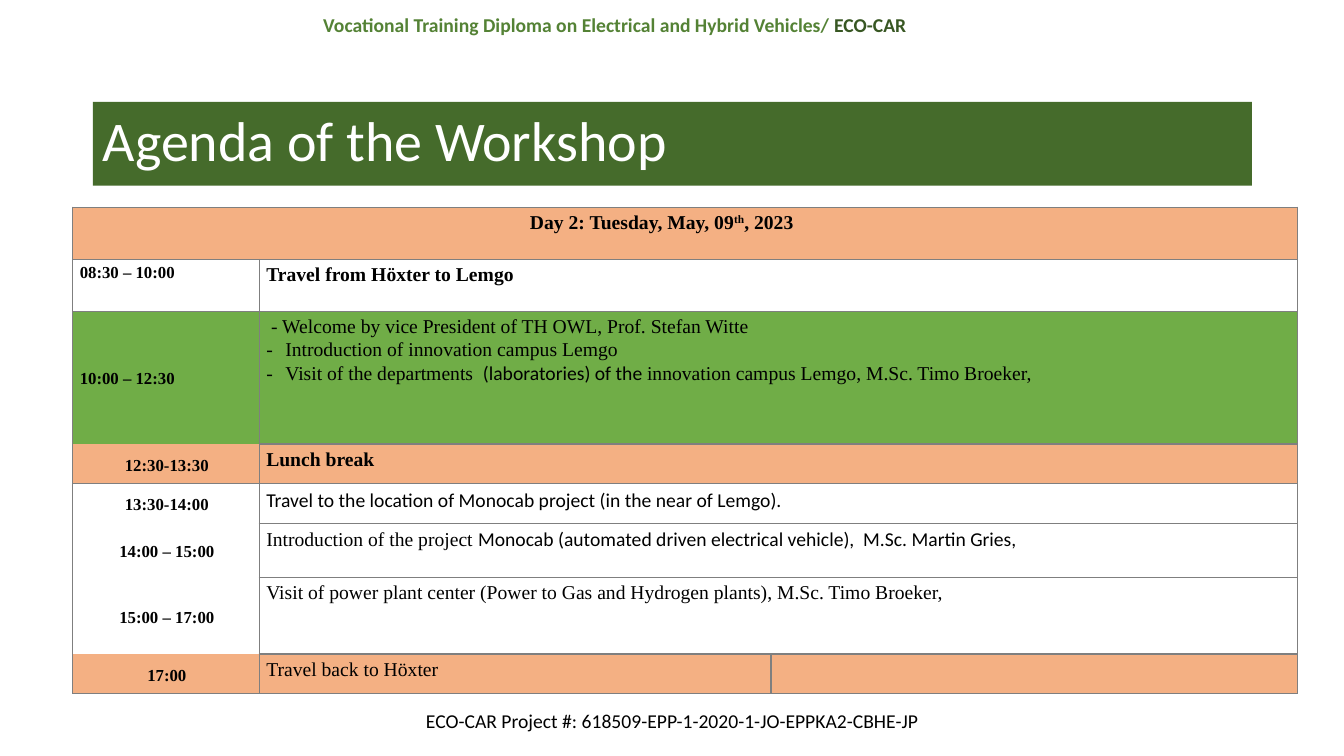
from lxml import etree
from pptx import Presentation
from pptx.dml.color import RGBColor
from pptx.enum.text import MSO_ANCHOR, MSO_AUTO_SIZE, PP_ALIGN
from pptx.oxml.ns import qn
from pptx.util import Cm, Pt

LEFT, CENTER = PP_ALIGN.LEFT, PP_ALIGN.CENTER
TOP, MIDDLE = MSO_ANCHOR.TOP, MSO_ANCHOR.MIDDLE
SANS, SERIF = "Calibri", "Times New Roman"
COLORS = {
    "black": "000000", "white": "FFFFFF", "banner": "456B2B",
    "green": "70AD47", "orange": "F4B083", "border": "7F7F7F",
    "heading": "548235", "project": "385723",
}

TITLE = "Agenda of the Workshop"
HEADING = [("Vocational Training Diploma on Electrical and Hybrid Vehicles/ ", "heading"),
           ("ECO-CAR", "project")]
FOOTER = [("ECO-CAR Project #: 618509-EPP-1-2020-1-JO-EPPKA2-CBHE-JP", "black")]
DAY = [("Day 2: Tuesday, May, 09", SERIF), ("th", SERIF), (", 2023", SERIF)]
DAY_HEIGHT = 1.32
COLUMN_WIDTHS = [4.7, 12.9, 13.26]

# time, height, fill, edges of the time cell, bold, paragraphs
SESSIONS = [
    ("08:30 – 10:00", 1.3, None, "LRTB", True, [[("Travel from Höxter to Lemgo", SERIF)]]),
    ("10:00 – 12:30", 3.35, "green", "LRT", False, [
        [(" - Welcome by vice President of TH OWL, Prof. Stefan Witte", SERIF)],
        [("Introduction of innovation campus Lemgo", SERIF)],
        [("Visit of the departments ", SERIF), (" (laboratories) of the ", SANS),
         ("innovation campus Lemgo, M.Sc. Timo Broeker,", SERIF)]]),
    ("12:30-13:30", 1.0, "orange", "LRB", True, [[("Lunch break", SERIF)]]),
    ("13:30-14:00", 1.0, None, "LRT", False, [
        [("Travel to the location of Monocab project (in the near of Lemgo).", SANS)]]),
    ("14:00 – 15:00", 1.37, None, "LR", False, [
        [("Introduction of the project ", SERIF),
         ("Monocab (automated driven electrical vehicle),  M.Sc. Martin Gries,", SANS)]]),
    ("15:00 – 17:00", 1.92, None, "LR", False, [
        [("Visit of power plant center (Power to Gas and Hydrogen plants), M.Sc. Timo Broeker,",
          SERIF)]]),
    ("17:00", 1.0, "orange", "LRB", False, [[("Travel back to Höxter", SERIF)]]),
]


def rgb(name):
    return RGBColor.from_string(COLORS[name])


def add_run(p, text, font, size, color="black", bold=False):
    r = p.add_run()
    r.text = text
    r.font.name, r.font.size, r.font.bold = font, Pt(size), bold
    r.font.color.rgb = rgb(color)
    return r


def add_label(s, box, parts, bold, anchor):
    tf = s.shapes.add_textbox(*[Cm(v) for v in box]).text_frame
    tf.word_wrap = True
    tf.vertical_anchor = anchor
    p = tf.paragraphs[0]
    p.alignment = CENTER
    for text, color in parts:
        add_run(p, text, SANS, 14, color, bold)


def add_dash(p):
    pPr = p._p.get_or_add_pPr()
    pPr.set("marL", str(Cm(0.48)))
    pPr.set("indent", str(-Cm(0.48)))
    etree.SubElement(pPr, qn("a:buFont")).set("typeface", SERIF)
    etree.SubElement(pPr, qn("a:buChar")).set("char", "-")


def style_cell(cell, edges, fill, anchor):
    tcPr = cell._tc.get_or_add_tcPr()
    for edge in "LRTB":
        ln = etree.SubElement(tcPr, qn("a:ln" + edge))
        if edge in edges:
            ln.set("w", str(Pt(1)))
            solid = etree.SubElement(ln, qn("a:solidFill"))
            etree.SubElement(solid, qn("a:srgbClr")).set("val", COLORS["border"])
        else:
            etree.SubElement(ln, qn("a:noFill"))
    if fill:
        cell.fill.solid()
        cell.fill.fore_color.rgb = rgb(fill)
    else:
        cell.fill.background()
    cell.vertical_anchor = anchor
    cell.margin_left, cell.margin_right = Cm(0.18), Cm(0.13)
    cell.margin_top, cell.margin_bottom = Cm(0.08), Cm(0.03)


def fill_cell(cell, paragraphs, size, bold, align):
    tf = cell.text_frame
    for i, parts in enumerate(paragraphs):
        p = tf.add_paragraph() if i else tf.paragraphs[0]
        p.alignment, p.line_spacing = align, 1.07
        if i:
            add_dash(p)
        for text, font in parts:
            add_run(p, text, font, size, bold=bold)


def add_agenda(s):
    heights = [DAY_HEIGHT] + [session[1] for session in SESSIONS]
    frame = s.shapes.add_table(len(heights), 3, Cm(1.83), Cm(5.22),
                               Cm(sum(COLUMN_WIDTHS)), Cm(sum(heights)))
    table = frame.table
    table.first_row = table.horz_banding = False
    for column, width in zip(table.columns, COLUMN_WIDTHS):
        column.width = Cm(width)
    for row, height in zip(table.rows, heights):
        row.height = Cm(height)

    table.cell(0, 0).merge(table.cell(0, 2))
    for i in range(1, len(SESSIONS)):
        table.cell(i, 1).merge(table.cell(i, 2))

    fills = ["orange"] + [session[2] for session in SESSIONS]
    time_edges = ["LRTB"] + [session[3] for session in SESSIONS]
    for i, fill in enumerate(fills):
        for j in range(3):
            cell = table.cell(i, j)
            edges = time_edges[i] if j == 0 else "LRTB"
            if cell.is_spanned:
                edges = "RTB" if j == 2 else "TB"
            style_cell(cell, edges, fill, MIDDLE if j == 0 and i > 1 else TOP)

    day = table.cell(0, 0)
    fill_cell(day, [DAY], 14, True, CENTER)
    day.margin_right = Cm(1.35)
    day.text_frame.paragraphs[0].runs[1]._r.get_or_add_rPr().set("baseline", "30000")
    for i, (time, _, _, _, bold, paragraphs) in enumerate(SESSIONS, 1):
        fill_cell(table.cell(i, 0), [[(time, SERIF)]], 12, True, LEFT if i < 3 else CENTER)
        fill_cell(table.cell(i, 1), paragraphs, 14, bold, LEFT)


def main():
    prs = Presentation()
    prs.slide_width, prs.slide_height = Cm(33.87), Cm(19.05)
    s = prs.slides.add_slide(prs.slide_layouts[5])

    add_label(s, (9.96, 17.65, 13.97, 1.02), FOOTER, False, MIDDLE)
    add_label(s, (6.15, 0.2, 18.69, 1.45), HEADING, True, TOP)

    title = s.shapes.title
    title.left, title.top, title.width, title.height = Cm(2.34), Cm(2.57), Cm(29.21), Cm(2.11)
    title.fill.solid()
    title.fill.fore_color.rgb = rgb("banner")
    tf = title.text_frame
    tf.auto_size = MSO_AUTO_SIZE.NONE
    tf.vertical_anchor = MIDDLE
    p = tf.paragraphs[0]
    p.alignment, p.line_spacing = LEFT, 0.9
    add_run(p, TITLE, SANS, 40, "white")

    add_agenda(s)
    prs.save("out.pptx")


if __name__ == "__main__":
    main()
